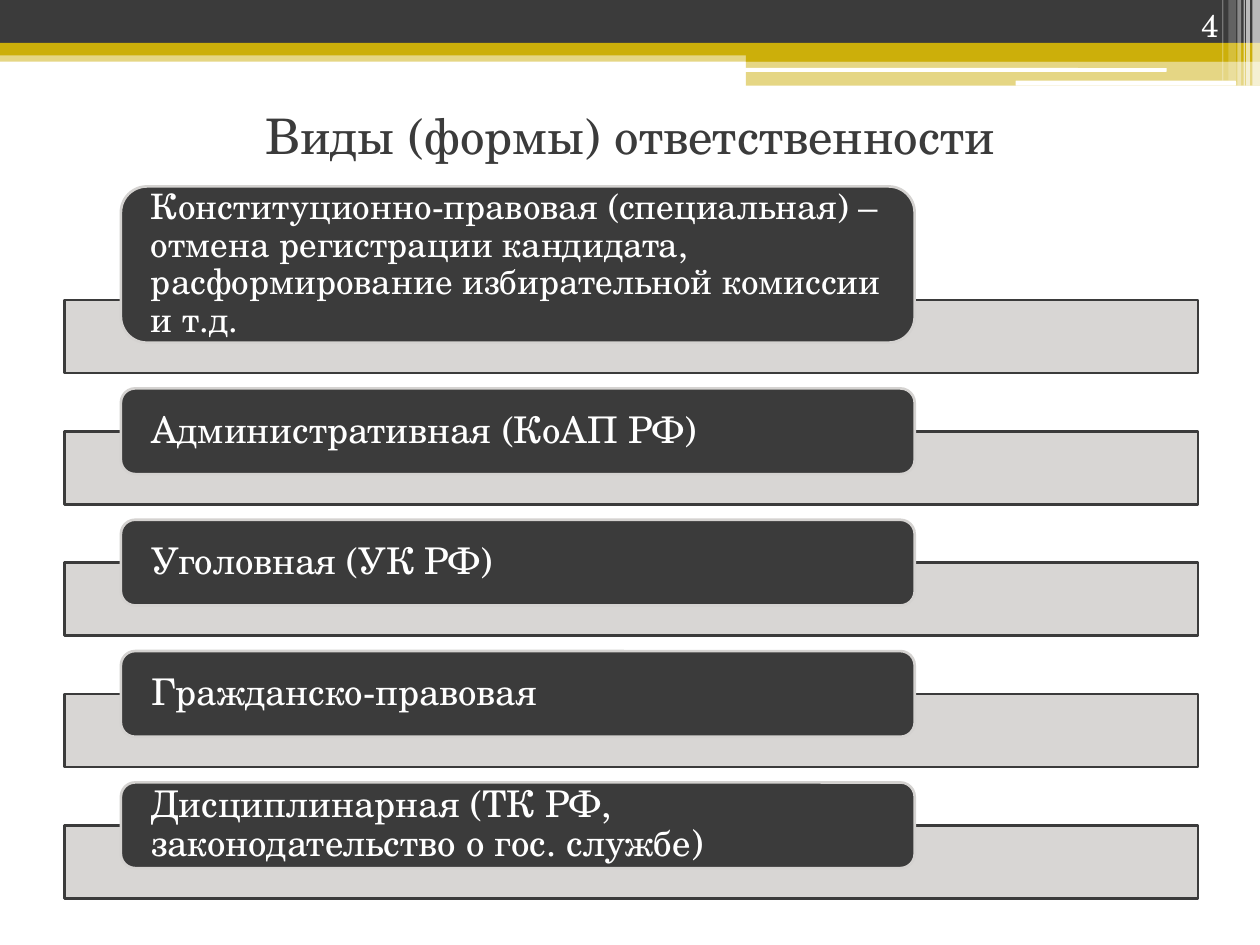
from lxml import etree
from pptx import Presentation
from pptx.dml.color import RGBColor
from pptx.enum.shapes import MSO_SHAPE
from pptx.enum.text import MSO_ANCHOR, PP_ALIGN
from pptx.oxml.ns import qn
from pptx.util import Inches, Pt

RECT, ROUND = MSO_SHAPE.RECTANGLE, MSO_SHAPE.ROUNDED_RECTANGLE
LEFT, CENTER, RIGHT = PP_ALIGN.LEFT, PP_ALIGN.CENTER, PP_ALIGN.RIGHT
MIDDLE, BOTTOM = MSO_ANCHOR.MIDDLE, MSO_ANCHOR.BOTTOM

FONT = "TeX Gyre Schola"
DARK, GOLD, GRAY, WHITE = "3B3B3B", "CCAF0A", "D4D2D0", "FFFFFF"

# The slide is a grid of 100 columns by 75 rows of square cells
COLS, ROWS = 100, 75
WIDTH, HEIGHT = Inches(10), Inches(7.5)
CELL = WIDTH / COLS

KINDS = [
    ("Конституционно-правовая (специальная) – отмена регистрации кандидата, "
     "расформирование избирательной комиссии и т.д.", 12.4, 20),
    ("Административная (КоАП РФ)", 6.8, 21),
    ("Уголовная (УК РФ)", 6.8, 21),
    ("Гражданско-правовая", 6.8, 21),
    ("Дисциплинарная (ТК РФ, законодательство о гос. службе)", 6.8, 21),
]


def color(code):
    return RGBColor.from_string(code)


def cells(*sizes):
    return [round(size * CELL) for size in sizes]


def block(slide, box, fill, alpha=100, line=None, kind=RECT):
    shape = slide.shapes.add_shape(kind, *cells(*box))
    shape.shadow.inherit = False
    shape.fill.solid()
    shape.fill.fore_color.rgb = color(fill)
    if alpha < 100:
        tint = shape.fill._xPr.find(qn("a:solidFill"))[0]
        etree.SubElement(tint, qn("a:alpha")).set("val", str(alpha * 1000))
    if line:
        shape.line.color.rgb = color(line)
        shape.line.width = Pt(1.5)
    else:
        shape.line.fill.background()
    return shape


def write(shape, text, size, ink=WHITE, align=LEFT, anchor=MIDDLE,
          pad=(1, 0.5), lead=None, after=None):
    frame = shape.text_frame
    frame.word_wrap = True
    frame.vertical_anchor = anchor
    side, edge = cells(*pad)
    frame.margin_left = frame.margin_right = side
    frame.margin_top = frame.margin_bottom = edge
    para = frame.paragraphs[0]
    para.text = text
    para.alignment = align
    para.line_spacing = lead
    para.space_after = after
    para.font.name = FONT
    para.font.size = Pt(size)
    para.font.color.rgb = color(ink)


def label(slide, box, text, size, **style):
    write(slide.shapes.add_textbox(*cells(*box)), text, size, **style)


def header(slide, box):
    x, y, w, h = box
    right = x + w
    # Bands over the full width
    block(slide, (x, y + 4, w, 0.9), GOLD, 50)
    block(slide, (x, y, w, 3.4), DARK)
    block(slide, (x, y + 3.4, w, 1), GOLD)
    # Lower step on the right, with white cuts
    step = 40.8
    block(slide, (right - step, y + 3.9, step, 1), GOLD)
    block(slide, (right - step, y + 4.8, step, 2), GOLD, 50)
    block(slide, (right - 40.9, y + 5.4, 33.5, 0.3), WHITE, kind=ROUND)
    block(slide, (right - 19.4, y + 6.4, 17.5, 0.4), WHITE, kind=ROUND)
    # Light stripes: distance from the right edge, width, height, opacity
    for back, wide, tall, alpha in [
            (0.6, 0.6, h, 65), (1.1, 0.3, h, 65), (1.3, 0.1, h, 60),
            (1.8, 0.3, h, 40), (2.5, 0.6, h - 0.4, 20),
            (3, 0.1, h - 0.4, 30)]:
        block(slide, (right - back, y, wide, tall), WHITE, alpha)


def stack(slide, box, kinds):
    x, y, w, h = box
    bar, lap = 5.8, 3.4
    used = sum(tall - lap + bar for _, tall, _ in kinds)
    gap = (h - used) / (len(kinds) - 1)
    for text, tall, size in kinds:
        # Bar behind, pill on top of its upper part
        low = y + tall - lap
        block(slide, (x, low, w, bar), GRAY, 90, line=DARK)
        pill = block(slide, (x + 0.05 * w, y, 0.7 * w, tall), DARK,
                     line=GRAY, kind=ROUND)
        # Rounded corners already inset the text by 5% of the height
        write(pill, text, size, pad=(2.4 - 0.05 * tall, 0), lead=0.9,
              after=Pt(7))
        y = low + bar + gap


def main():
    deck = Presentation()
    deck.slide_width, deck.slide_height = WIDTH, HEIGHT
    slide = deck.slides.add_slide(deck.slide_layouts[6])
    header(slide, (0, 0, COLS, 6.8))
    label(slide, (5, 7.6, 90, 6.3), "Виды (формы) ответственности", 28,
          ink=DARK, align=CENTER)
    stack(slide, (5.1, 14.8, 90, ROWS - 18.5), KINDS)
    label(slide, (89.4, 0, 8.3, 4), "4", 18, align=RIGHT, anchor=BOTTOM)
    deck.save("out.pptx")


if __name__ == "__main__":
    main()
